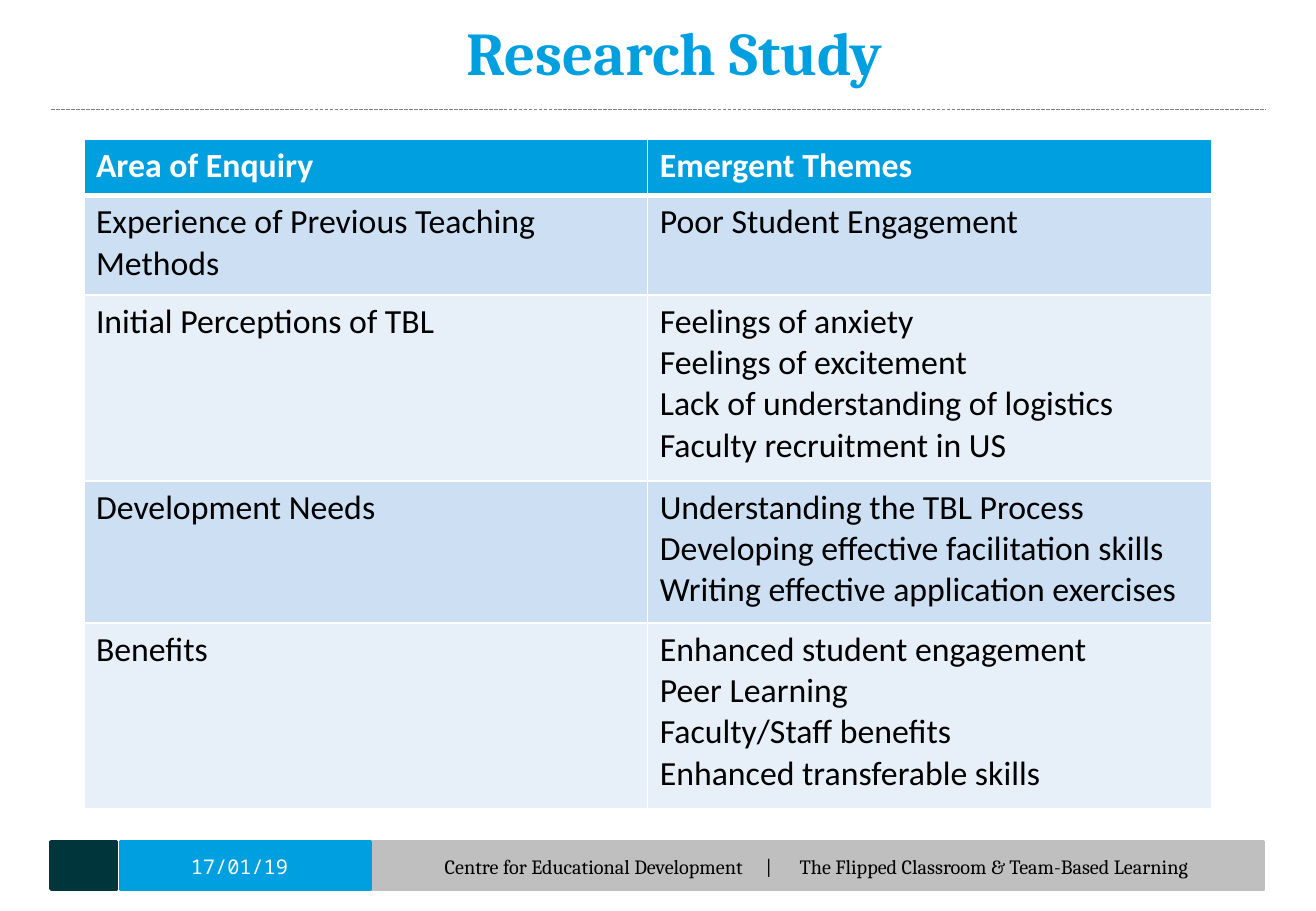
"""Build the Research Study slide with its table of enquiry areas and themes."""
from lxml import etree
from pptx import Presentation
from pptx.dml.color import RGBColor
from pptx.enum.dml import MSO_LINE
from pptx.enum.shapes import MSO_CONNECTOR, MSO_SHAPE
from pptx.enum.text import MSO_ANCHOR, PP_ALIGN
from pptx.oxml import parse_xml
from pptx.oxml.ns import nsdecls, qn
from pptx.util import Inches, Pt

RECTANGLE = MSO_SHAPE.RECTANGLE
STRAIGHT = MSO_CONNECTOR.STRAIGHT
DASHED = MSO_LINE.SQUARE_DOT
MIDDLE = MSO_ANCHOR.MIDDLE
LEFT, CENTER = PP_ALIGN.LEFT, PP_ALIGN.CENTER
BLUE, DARK, GREY, WHITE, BLACK = "009FDF", "00363B", "BFBFBF", "FFFFFF", "000000"
BANDS = ["CCDFF3", "E7F0F9"]


def paint(fill, color):
    fill.solid()
    fill.fore_color.rgb = RGBColor.from_string(color)


def add_text(place, insets, text, font_name, size, color, align, bold=False, tabs=()):
    frame = slide.shapes.add_textbox(*map(Inches, place)).text_frame
    frame.word_wrap = True
    frame.vertical_anchor = MIDDLE
    frame.margin_left, frame.margin_right = map(Inches, insets)
    frame.margin_top = frame.margin_bottom = 0
    paragraph = frame.paragraphs[0]
    paragraph.text = text
    paragraph.alignment = align
    if tabs:
        tab_list = etree.SubElement(paragraph._p.get_or_add_pPr(), qn("a:tabLst"))
        for position in tabs:
            etree.SubElement(tab_list, qn("a:tab"), pos=str(Inches(position)), algn="l")
    paragraph.font.name = font_name
    paragraph.font.size = Pt(size)
    paragraph.font.bold = bold
    paint(paragraph.font.fill, color)


presentation = Presentation()
presentation.slide_width = Inches(10.83)
presentation.slide_height = Inches(7.5)
slide = presentation.slides.add_slide(presentation.slide_layouts[6])

for left, width, color in [(0.42, 0.54, DARK), (3.05, 7.35, GREY), (0.99, 2.06, BLUE)]:
    footer_bar = slide.shapes.add_shape(
        RECTANGLE, Inches(left), Inches(6.93), Inches(width), Inches(0.39))
    footer_bar.shadow.inherit = False
    paint(footer_bar.fill, color)
    paint(footer_bar.line.fill, color)
    footer_bar.line.width = Pt(2)

title_rule = slide.shapes.add_connector(
    STRAIGHT, Inches(0.42), Inches(0.9), Inches(10.42), Inches(0.9))
paint(title_rule.line.fill, "7F7F7F")
title_rule.line.width = Pt(0.75)
title_rule.line.dash_style = DASHED
etree.SubElement(title_rule._element.spPr, qn("a:effectLst"))

add_text((3.84, 0, 6.58, 0.85), (0, 0), "Research Study", "Cambria", 36, BLUE, LEFT, bold=True)

themes_by_area = [
    ("Area of Enquiry", ["Emergent Themes"]),
    ("Experience of Previous Teaching Methods", ["Poor Student Engagement"]),
    ("Initial Perceptions of TBL", [
        "Feelings of anxiety", "Feelings of excitement",
        "Lack of understanding of logistics", "Faculty recruitment in US"]),
    ("Development Needs", [
        "Understanding the TBL Process", "Developing effective facilitation skills",
        "Writing effective application exercises"]),
    ("Benefits", [
        "Enhanced student engagement", "Peer Learning",
        "Faculty/Staff benefits", "Enhanced transferable skills"]),
]
row_heights = [0.46, 0.82, 1.53, 1.17, 1.53]
themes_table = slide.shapes.add_table(
    len(themes_by_area), 2, Inches(0.69), Inches(1.15), Inches(9.28), Inches(5.51)).table

for row, (area, themes) in enumerate(themes_by_area):
    themes_table.rows[row].height = Inches(row_heights[row])
    is_header = row == 0
    for column, lines in enumerate([[area], themes]):
        cell = themes_table.cell(row, column)
        cell.text = "\n".join(lines)
        for paragraph in cell.text_frame.paragraphs:
            paragraph.font.name = "Calibri"
            paragraph.font.size = Pt(20)
            paragraph.font.bold = is_header
            paint(paragraph.font.fill, WHITE if is_header else BLACK)
        paint(cell.fill, BLUE if is_header else BANDS[(row - 1) % 2])
        for index, side in enumerate("LRTB"):
            thick = (row, side) in [(0, "B"), (1, "T")]
            cell._tc.tcPr.insert(index, parse_xml(
                f'<a:ln{side} {nsdecls("a")} w="{Pt(3 if thick else 1)}"><a:solidFill>'
                f'<a:srgbClr val="{WHITE}"/></a:solidFill></a:ln{side}>'))

add_text((0.99, 6.93, 2.06, 0.4), (0, 0.1), "17/01/19", "Noto Sans Mono", 12, WHITE, CENTER)
add_text((3.05, 6.93, 7.35, 0.4), (0.61, 0.12),
         "Centre for Educational Development\t|\tThe Flipped Classroom & Team-Based Learning",
         "Cambria", 12, BLACK, LEFT, tabs=(2.64, 2.92))

presentation.save("out.pptx")
